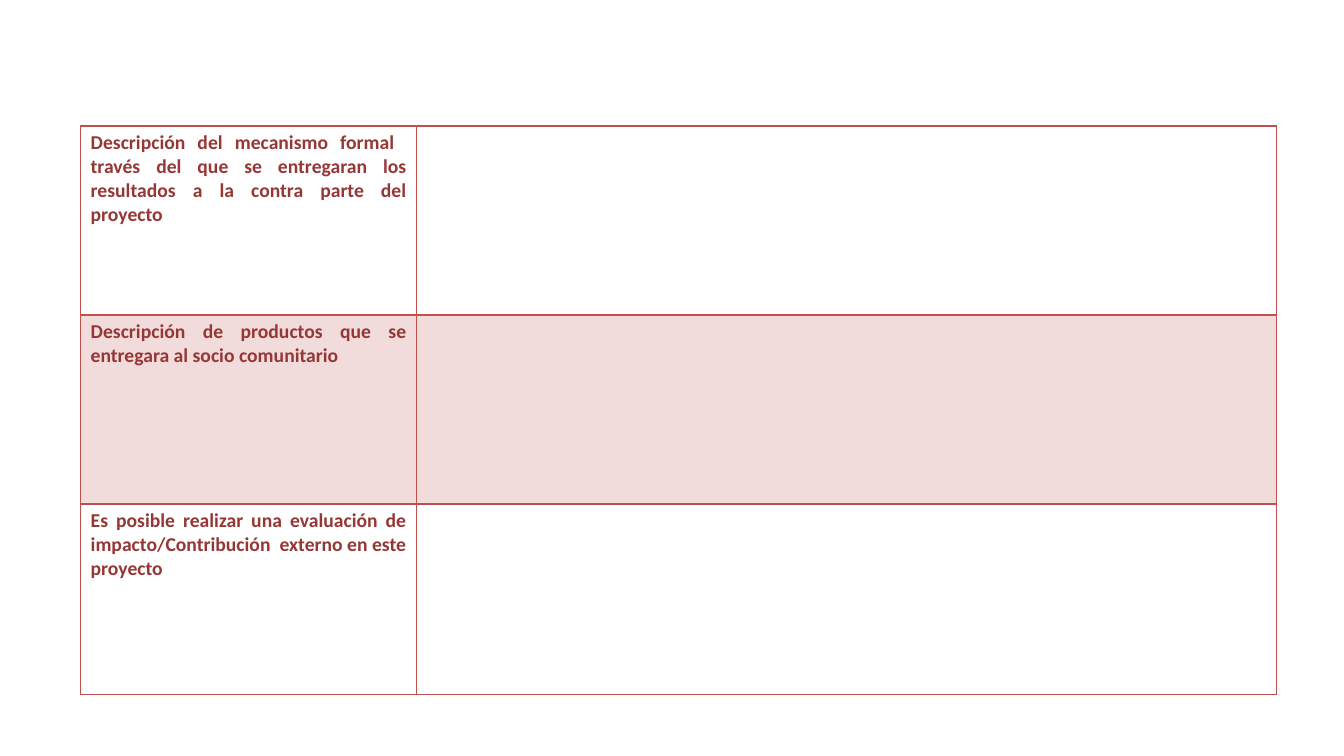
from lxml.etree import SubElement
from pptx import Presentation
from pptx.dml.color import RGBColor
from pptx.enum.text import PP_ALIGN
from pptx.oxml.ns import qn
from pptx.util import Inches, Pt

BRICK = RGBColor(0xC0, 0x50, 0x4D)
MAROON = RGBColor(0x95, 0x37, 0x35)

QUESTIONS = [
    "Descripción del mecanismo formal  través del que se entregaran los resultados a la contra parte del proyecto",
    "Descripción de productos que se entregara al socio comunitario",
    "Es posible realizar una evaluación de impacto/Contribución  externo en este proyecto",
]
COLUMN_SHARES = [0.25, 0.64]
ROW_SHARES = [0.25, 0.25, 0.252]
SHADED_ROW = 1


class FormPage:
    font_name = "Calibri"
    font_size = Pt(14)
    thin = Pt(1)
    thick = Pt(2)

    def __init__(self, deck):
        self.width = deck.slide_width
        self.height = deck.slide_height
        self.page = deck.slides.add_slide(deck.slide_layouts[6])

    def across(self, share):
        return round(self.width * share)

    def down(self, share):
        return round(self.height * share)

    def table(self, left, top, column_shares, row_shares):
        frame = self.page.shapes.add_table(
            len(row_shares), len(column_shares),
            self.across(left), self.down(top),
            self.across(sum(column_shares)), self.down(sum(row_shares)))
        table = frame.table
        table.first_row = False
        table.horz_banding = False
        for column, share in zip(table.columns, column_shares):
            column.width = self.across(share)
        for row, share in zip(table.rows, row_shares):
            row.height = self.down(share)
        return table

    def borders(self, cell, top, bottom):
        properties = cell._tc.get_or_add_tcPr()
        sides = {"L": self.thin, "R": self.thin, "T": top, "B": bottom}
        for side, weight in sides.items():
            line = SubElement(properties, qn(f"a:ln{side}"), w=str(weight))
            fill = SubElement(line, qn("a:solidFill"))
            SubElement(fill, qn("a:srgbClr"), val=str(BRICK))

    def shade(self, cell, shaded):
        if not shaded:
            cell.fill.background()
            return
        cell.fill.solid()
        cell.fill.fore_color.rgb = BRICK
        color = cell._tc.tcPr.find(qn("a:solidFill")).find(qn("a:srgbClr"))
        SubElement(color, qn("a:alpha"), val="20000")

    def question(self, cell, text):
        para = cell.text_frame.paragraphs[0]
        para.alignment = PP_ALIGN.JUSTIFY
        span = para.add_run()
        span.text = text
        span.font.name = self.font_name
        span.font.size = self.font_size
        span.font.bold = True
        span.font.color.rgb = MAROON


def main():
    deck = Presentation()
    deck.slide_width = Inches(13.33)
    deck.slide_height = Inches(7.5)
    form = FormPage(deck)
    table = form.table(0.06, 1 / 6, COLUMN_SHARES, ROW_SHARES)
    for index, (row, text) in enumerate(zip(table.rows, QUESTIONS)):
        top = form.thick if index == 1 else form.thin
        bottom = form.thick if index == 0 else form.thin
        for cell in row.cells:
            form.borders(cell, top, bottom)
            form.shade(cell, index == SHADED_ROW)
        form.question(row.cells[0], text)
    deck.save("out.pptx")


if __name__ == "__main__":
    main()
